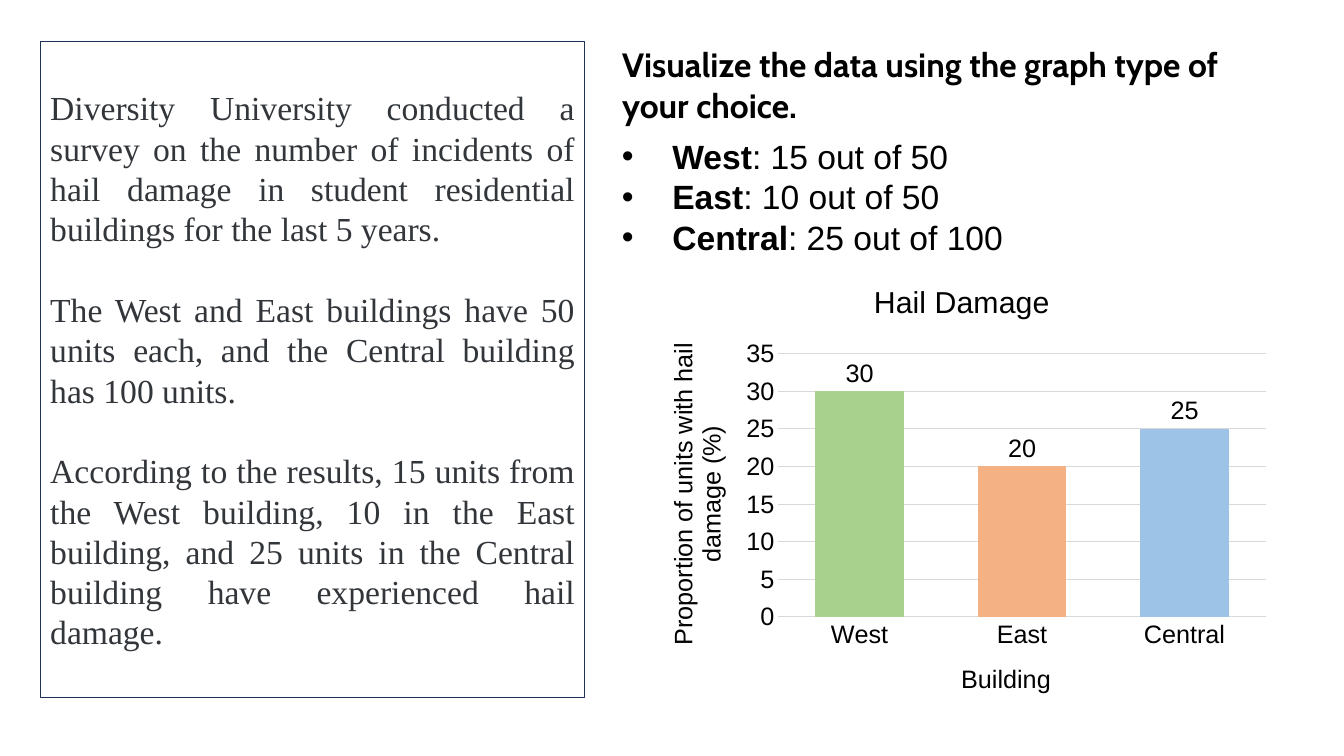
"""Build the hail damage slide with a survey summary, a task and a column chart."""
from lxml import etree
from pptx import Presentation
from pptx.chart.data import CategoryChartData
from pptx.dml.color import RGBColor
from pptx.enum import chart as ch, shapes, text
from pptx.oxml import parse_xml
from pptx.oxml.ns import nsdecls, qn
from pptx.util import Inches, Pt

BLACK = RGBColor(0x00, 0x00, 0x00)
INK = RGBColor(0x32, 0x36, 0x3A)
NAVY = RGBColor(0x1E, 0x32, 0x56)
GRID = RGBColor(0xD9, 0xD9, 0xD9)
GREEN = RGBColor(0xA9, 0xD1, 0x8E)
ORANGE = RGBColor(0xF4, 0xB1, 0x83)
BLUE = RGBColor(0x9D, 0xC3, 0xE6)

BUILDINGS = [
    ("West", ": 15 out of 50", 30, GREEN),
    ("East", ": 10 out of 50", 20, ORANGE),
    ("Central", ": 25 out of 100", 25, BLUE),
]
SURVEY = [
    "Diversity University conducted a survey on the number of incidents of hail "
    "damage in student residential buildings for the last 5 years.",
    "The West and East buildings have 50 units each, and the Central building has 100 units.",
    "According to the results, 15 units from the West building, 10 in the East building, "
    "and 25 units in the Central building have experienced hail damage.",
]


def style(font, size, name="Arial", color=BLACK, bold=False):
    font.size = Pt(size)
    font.name = name
    font.color.rgb = color
    font.bold = bold


prs = Presentation()
prs.slide_width = Inches(13.33)
prs.slide_height = Inches(7.5)
s = prs.slides.add_slide(prs.slide_layouts[5])

title = s.shapes.title
title.left, title.top = Inches(6.07), Inches(0.39)
title.width, title.height = Inches(6.28), Inches(0.91)
tf = title.text_frame
tf.text = "Visualize the data using the graph type of your choice."
tf.vertical_anchor = text.MSO_ANCHOR.TOP
tf.auto_size = text.MSO_AUTO_SIZE.NONE
tf.paragraphs[0].alignment = text.PP_ALIGN.LEFT
style(tf.paragraphs[0].runs[0].font, 24, "Cabin", bold=True)

survey = s.shapes.add_shape(
    shapes.MSO_SHAPE.RECTANGLE, Inches(0.4), Inches(0.41), Inches(5.4), Inches(6.51))
survey.shadow.inherit = False
survey.fill.background()
survey.line.color.rgb = NAVY
survey.line.width = Pt(1)
tf = survey.text_frame
tf.word_wrap = True
tf.vertical_anchor = text.MSO_ANCHOR.MIDDLE
tf.text = "\n".join(SURVEY)
for p in tf.paragraphs:
    p.alignment = text.PP_ALIGN.JUSTIFY
    p.line_spacing = Pt(28.8)
    style(p.runs[0].font, 24, "Times New Roman", INK)
for p in tf.paragraphs[:-1]:
    p.space_after = Pt(28.8)

counts = s.shapes.add_textbox(Inches(6.07), Inches(1.3), Inches(5.04), Inches(1.31))
tf = counts.text_frame
tf.word_wrap = True
for i, (building, count, share, color) in enumerate(BUILDINGS):
    p = tf.paragraphs[0] if i == 0 else tf.add_paragraph()
    p.line_spacing = Pt(28.8)
    for words, bold in ((building, True), (count, False)):
        r = p.add_run()
        r.text = words
        style(r.font, 24, bold=bold)
    pPr = p._p.get_or_add_pPr()
    pPr.set("marL", str(Inches(0.5)))
    pPr.set("indent", str(Inches(-0.5)))
    etree.SubElement(pPr, qn("a:buFont")).set("typeface", "Arial")
    etree.SubElement(pPr, qn("a:buChar")).set("char", "•")

data = CategoryChartData()
data.categories = [b[0] for b in BUILDINGS]
data.add_series("Series 1", [b[2] for b in BUILDINGS])
chart = s.shapes.add_chart(
    ch.XL_CHART_TYPE.COLUMN_CLUSTERED,
    Inches(6.4), Inches(2.61), Inches(6.28), Inches(4.5), data).chart
style(chart.font, 18)
chart.has_legend = False

cat_axis, val_axis = chart.category_axis, chart.value_axis
cat_axis.has_title = val_axis.has_title = chart.has_title = True
for holder, words, size in (
        (chart.chart_title, "Hail Damage", 21.6),
        (cat_axis.axis_title, "Building", 18),
        (val_axis.axis_title, "Proportion of units with hail damage (%)", 18)):
    holder.text_frame.text = words
    style(holder.text_frame.paragraphs[0].runs[0].font, size)
for axis in (cat_axis, val_axis):
    axis.major_tick_mark = axis.minor_tick_mark = ch.XL_TICK_MARK.NONE
cat_axis.format.line.color.rgb = GRID
cat_axis.format.line.width = Pt(0.75)
val_axis.format.line.fill.background()
val_axis.minimum_scale, val_axis.maximum_scale, val_axis.major_unit = 0, 35, 5
val_axis.major_gridlines.format.line.color.rgb = GRID
val_axis.major_gridlines.format.line.width = Pt(0.75)

plot = chart.plots[0]
plot.vary_by_categories = False
plot.gap_width = 84
plot.overlap = -27
plot.has_data_labels = True
plot.data_labels.show_value = True
plot.data_labels.position = ch.XL_LABEL_POSITION.OUTSIDE_END
style(plot.data_labels.font, 18)
for i, building in enumerate(BUILDINGS):
    fill = plot.series[0].points[i].format.fill
    fill.solid()
    fill.fore_color.rgb = building[3]

plot_area = chart._chartSpace.chart.plotArea
for layout in plot_area.findall(qn("c:layout")):
    plot_area.remove(layout)
plot_area.insert(0, parse_xml(
    f'<c:layout {nsdecls("c")}><c:manualLayout><c:layoutTarget val="inner"/>'
    '<c:xMode val="edge"/><c:yMode val="edge"/><c:x val="0.21"/><c:y val="0.2"/>'
    '<c:w val="0.77"/><c:h val="0.58"/></c:manualLayout></c:layout>'))

prs.save("out.pptx")
